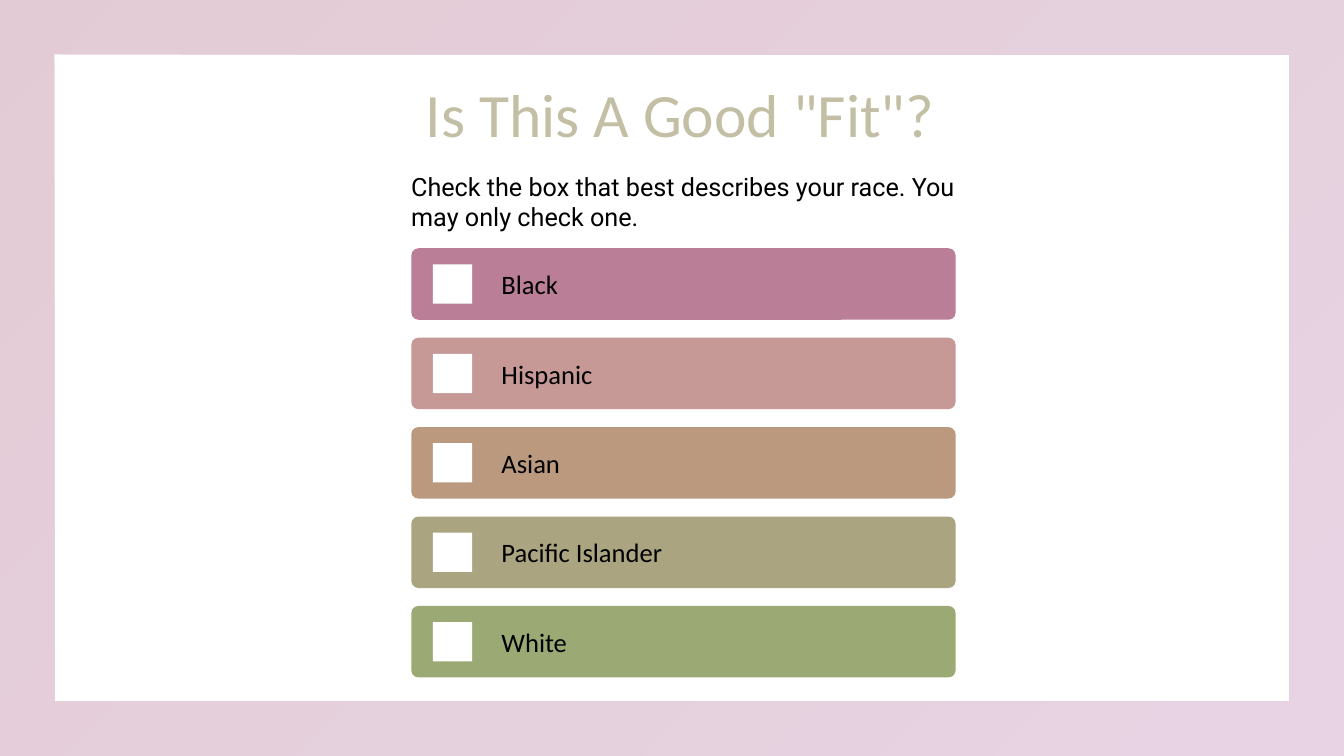
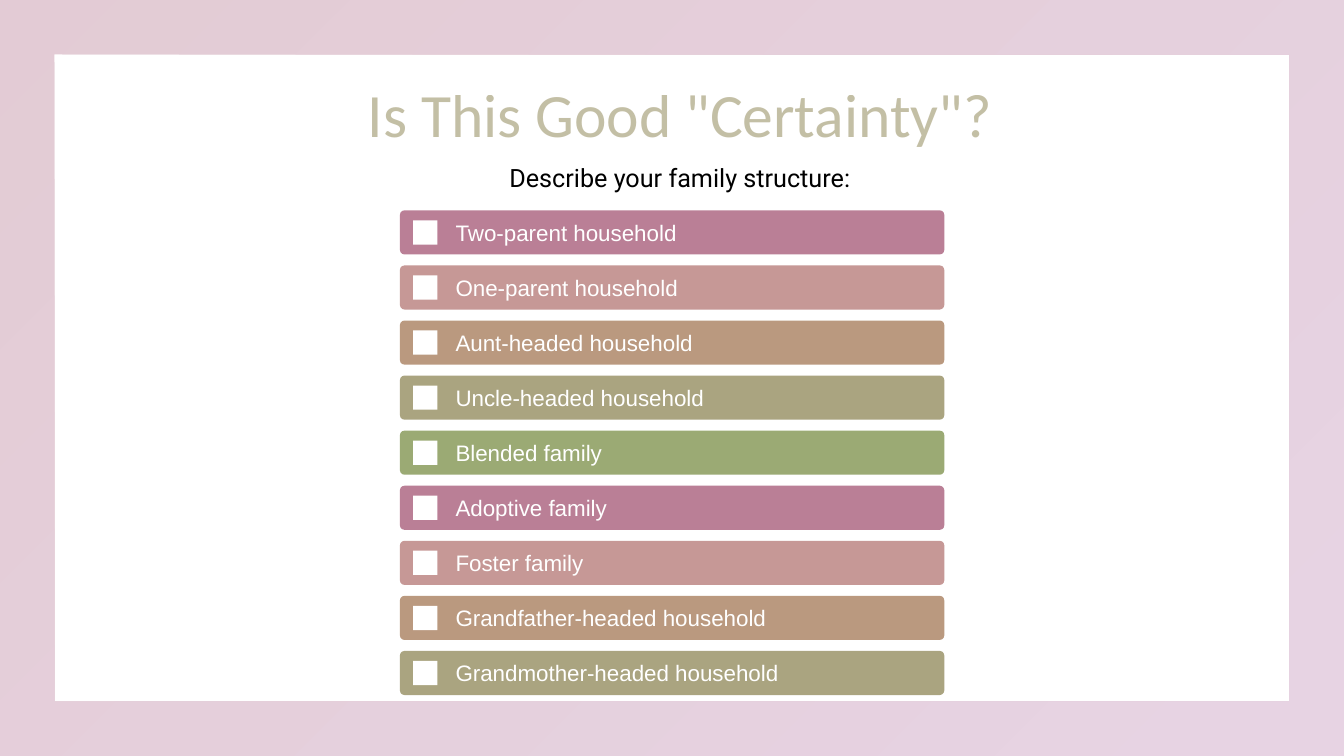
import pptx
import pptx.util
import pptx.dml.color
import pptx.enum.shapes
import pptx.enum.text
import lxml.etree

Pt = pptx.util.Pt
SHAPE = pptx.enum.shapes.MSO_SHAPE
ALIGN = pptx.enum.text.PP_ALIGN
ANCHOR = pptx.enum.text.MSO_ANCHOR
AUTO_SIZE = pptx.enum.text.MSO_AUTO_SIZE

COLOURS = {
    "mauve": "BA7F96",
    "rose": "C69896",
    "tan": "BA997F",
    "khaki": "AAA480",
    "green": "9BAA74",
    "orchid": "C493BB",
    "white": "FFFFFF",
    "black": "000000",
}
BAR_COLOURS = ["mauve", "rose", "tan", "khaki", "green"]
BAR_WIDTH = 388.8

PAGES = [
    {
        "title": 'Is This A Good "Fit"?',
        "question": "Check the box that best describes your race. You may only check one.",
        "question_at": (286.6, 118.8, 411.8, 50.9),
        "question_align": ALIGN.LEFT,
        "answers": ["Black", "Hispanic", "Asian", "Pacific Islander", "White"],
        "left": 293.8, "top": 177.3, "bar_height": 51.1,
        "font": "Calibri", "size": 19, "colour": "black",
    },
    {
        "title": 'Is This Good "Certainty"?',
        "question": "Describe your family structure:",
        "question_at": (334.1, 112.3, 303.1, 28.8),
        "question_align": ALIGN.CENTER,
        "answers": [
            "Two-parent household", "One-parent household", "Aunt-headed household",
            "Uncle-headed household", "Blended family", "Adoptive family",
            "Foster family", "Grandfather-headed household",
            "Grandmother-headed household",
        ],
        "left": 285.7, "top": 150.3, "bar_height": 31.47,
        "font": "Arial", "size": 16, "colour": "white",
    },
]


def paint(colour_format, colour, opacity=100):
    """Set a colour, with its opacity in percent."""
    colour_format.rgb = pptx.dml.color.RGBColor.from_string(COLOURS[colour])
    if opacity < 100:
        for node in colour_format._xFill.iter("{*}srgbClr") if hasattr(
                colour_format, "_xFill") else ():
            alpha = lxml.etree.SubElement(node, node.tag.replace("srgbClr", "alpha"))
            alpha.set("val", str(opacity * 1000))


def write(frame, text, font, size, colour, align=ALIGN.LEFT, opacity=100):
    """Write one formatted run into a wrapping text frame."""
    frame.word_wrap = True
    para = frame.paragraphs[0]
    para.alignment = align
    span = para.add_run()
    span.text = text
    span.font.name = font
    span.font.size = Pt(size)
    paint(span.font.color, colour, opacity)
    return para


deck = pptx.Presentation()
deck.slide_width, deck.slide_height = Pt(960), Pt(540)

for content in PAGES:
    page = deck.slides.add_slide(deck.slide_layouts[5])

    # Gradient frame round the page
    border = page.shapes.add_shape(SHAPE.FRAME, 0, 0, deck.slide_width, deck.slide_height)
    border.adjustments[0] = 0.072
    border.shadow.inherit = False
    border.line.fill.background()
    border.fill.gradient()
    border.fill.gradient_angle = 315
    for stop, position, colour in zip(border.fill.gradient_stops, (0, 1), ("mauve", "orchid")):
        stop.position = position
        paint(stop.color, colour)
    for node in border.element.spPr.iter("{*}srgbClr"):
        lxml.etree.SubElement(node, node.tag.replace("srgbClr", "alpha")).set("val", "40000")

    # Title
    title = page.shapes.title
    title.left, title.top, title.width, title.height = Pt(53.3), Pt(46.1), Pt(865.4), Pt(65.5)
    title.text_frame.auto_size = AUTO_SIZE.NONE
    title.text_frame.vertical_anchor = ANCHOR.BOTTOM
    para = write(title.text_frame, content["title"], "Calibri", 44, "khaki", ALIGN.CENTER)
    para.line_spacing = 0.9
    for node in title.element.txBody.iter("{*}srgbClr"):
        lxml.etree.SubElement(node, node.tag.replace("srgbClr", "alpha")).set("val", "70000")

    # Question
    question = page.shapes.add_textbox(*map(Pt, content["question_at"]))
    write(question.text_frame, content["question"], "Roboto", 18, "black",
          content["question_align"])

    # Answer bars, all proportions following from the bar height
    height = content["bar_height"]
    tick_size = 0.55 * height
    label_offset = 1.155 * height
    answers = page.shapes.add_group_shape()
    for index, answer in enumerate(content["answers"]):
        left, top = content["left"], content["top"] + index * 1.25 * height
        bar_colour = BAR_COLOURS[index % len(BAR_COLOURS)]
        for kind, colour, x, y, width, depth in (
            (SHAPE.ROUNDED_RECTANGLE, bar_colour, left, top, BAR_WIDTH, height),
            (SHAPE.RECTANGLE, "white", left + 0.3 * height,
             top + (height - tick_size) / 2, tick_size, tick_size),
        ):
            box = answers.shapes.add_shape(kind, Pt(x), Pt(y), Pt(width), Pt(depth))
            box.shadow.inherit = False
            box.line.fill.background()
            box.fill.solid()
            paint(box.fill.fore_color, colour)
            if kind == SHAPE.ROUNDED_RECTANGLE:
                box.adjustments[0] = 0.1

        label = answers.shapes.add_textbox(
            Pt(left + label_offset), Pt(top), Pt(BAR_WIDTH - label_offset), Pt(height))
        frame = label.text_frame
        frame.vertical_anchor = ANCHOR.MIDDLE
        frame.margin_left = frame.margin_right = Pt(0.106 * height)
        frame.margin_top = frame.margin_bottom = Pt(0.106 * height)
        write(frame, answer, content["font"], content["size"], content["colour"])

deck.save("out.pptx")
